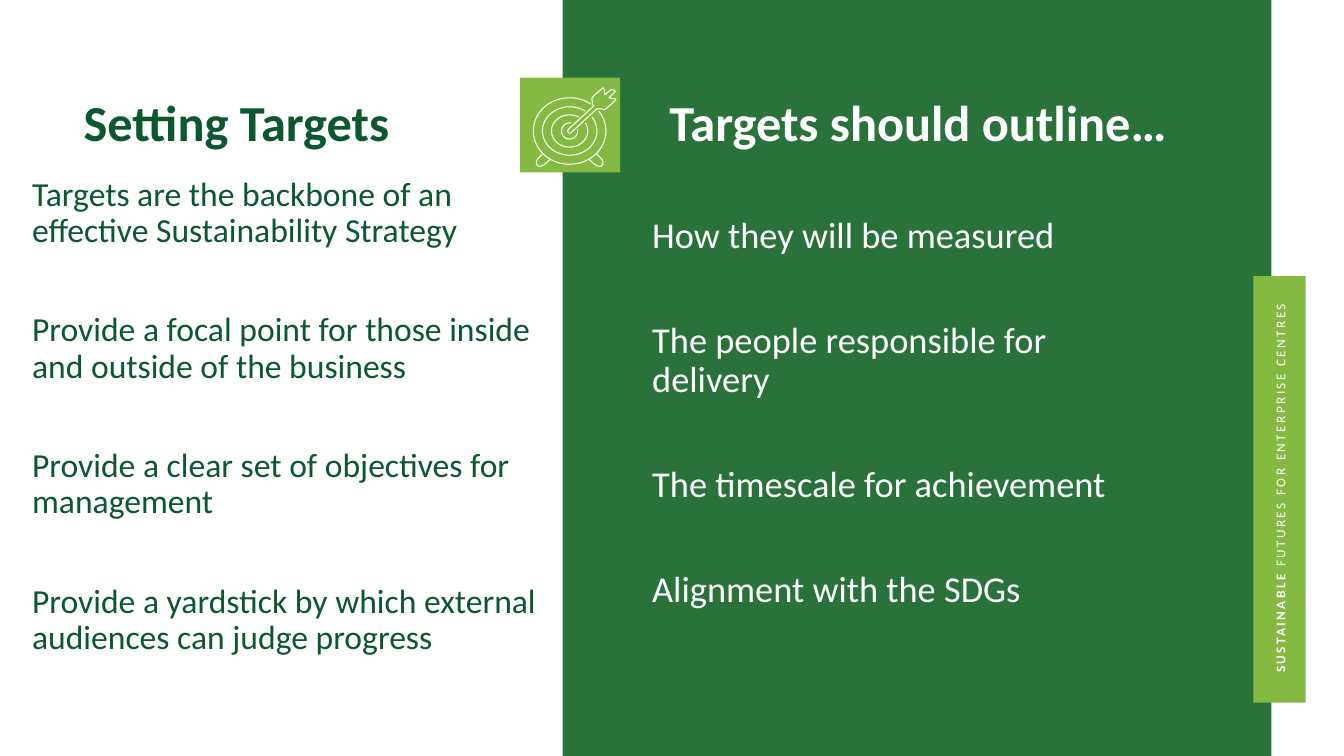
import math
from dataclasses import dataclass

import pptx
import pptx.dml.color
import pptx.enum.shapes
import pptx.enum.text
import pptx.util

Inches = pptx.util.Inches
Pt = pptx.util.Pt
ANCHOR = pptx.enum.text.MSO_ANCHOR
ALIGN = pptx.enum.text.PP_ALIGN


@dataclass(frozen=True)
class Theme:
    font: str = "Calibri"
    forest: str = "297239"
    lime: str = "84BA41"
    ink: str = "0B582E"
    white: str = "FFFFFF"
    heading: float = 36
    reasons: float = 24
    outline: float = 26
    strip: float = 9.5
    icon_line: float = 0.75


def rgb(value):
    return pptx.dml.color.RGBColor.from_string(value)


class SlideBuilder:
    def __init__(self, page, theme):
        self.page = page
        self.theme = theme

    def panel(self, left, top, width, height, color):
        shape = self.page.shapes.add_shape(
            pptx.enum.shapes.MSO_SHAPE.RECTANGLE,
            Inches(left), Inches(top), Inches(width), Inches(height))
        shape.shadow.inherit = False
        shape.fill.solid()
        shape.fill.fore_color.rgb = rgb(color)
        shape.line.fill.background()

    def span(self, para, text, size, color, bold=False, tracking=None):
        span = para.add_run()
        span.text = text
        span.font.name = self.theme.font
        span.font.size = Pt(size)
        span.font.bold = bold
        span.font.color.rgb = rgb(color)
        if tracking:
            span._r.get_or_add_rPr().set("spc", str(round(tracking * 100)))

    def box(self, left, top, width, height, anchor=ANCHOR.TOP):
        box = self.page.shapes.add_textbox(
            Inches(left), Inches(top), Inches(width), Inches(height))
        box.text_frame.word_wrap = True
        box.text_frame.vertical_anchor = anchor
        return box

    def paragraphs(self, frame, lines, size, color, gap=0, bold=False):
        for index, line in enumerate(lines):
            para = frame.add_paragraph() if index else frame.paragraphs[0]
            para.alignment = ALIGN.LEFT
            para.line_spacing = 0.9
            para.space_before = Pt(gap if index else 0)
            self.span(para, line, size, color, bold)

    def title(self, text, left, top, width, height):
        title = self.page.shapes.title
        title.left, title.top = Inches(left), Inches(top)
        title.width, title.height = Inches(width), Inches(height)
        title.text_frame.word_wrap = True
        title.text_frame.vertical_anchor = ANCHOR.TOP
        self.paragraphs(title.text_frame, [text], self.theme.heading,
                        self.theme.ink, bold=True)

    def outline(self, points, close=False):
        """Draw a thin unfilled line through points given in inches."""
        start, *rest = [(Inches(x), Inches(y)) for x, y in points]
        builder = self.page.shapes.build_freeform(*start, scale=1.0)
        builder.add_line_segments(rest, close=close)
        shape = builder.convert_to_shape()
        shape.shadow.inherit = False
        shape.fill.background()
        shape.line.color.rgb = rgb(self.theme.white)
        shape.line.width = Pt(self.theme.icon_line)

    def ring(self, center, radii, half_gap, steps=72):
        """Draw an ellipse left open around its upper right, where the arrow passes."""
        sweep = 360 - 2 * half_gap
        angles = [math.radians(half_gap - 45 + sweep * step / steps)
                  for step in range(steps + 1)]
        self.outline([(center[0] + radii[0] * math.cos(angle),
                       center[1] + radii[1] * math.sin(angle)) for angle in angles])


RINGS = [((0.36, 0.33), 9), ((0.27, 0.24), 10), ((0.18, 0.16), 15), ((0.08, 0.08), 34)]
TARGET_CENTER = (5.65, 1.3)
LEFT_FOOT = [(5.38, 1.53), (5.33, 1.58), (5.32, 1.6), (5.32, 1.63), (5.34, 1.65),
             (5.36, 1.65), (5.39, 1.64), (5.46, 1.58)]
ARROW = [(6.09, 0.98), (6.04, 0.97), (6.09, 0.92), (6.1, 0.91), (6.1, 0.9),
         (6.08, 0.89), (6.06, 0.89), (6, 0.94), (5.99, 0.88), (5.98, 0.87),
         (5.97, 0.88), (5.89, 0.95), (5.87, 0.98), (5.88, 1.04), (5.89, 1.05),
         (5.64, 1.28), (5.63, 1.3), (5.64, 1.32), (5.66, 1.32), (5.92, 1.08),
         (5.97, 1.08), (5.99, 1.09), (6.02, 1.07), (6.1, 1), (6.11, 0.98)]

REASONS = [
    "Targets are the backbone of an effective Sustainability Strategy",
    "Provide a focal point for those inside and outside of the business",
    "Provide a clear set of objectives for management",
    "Provide a yardstick by which external audiences can judge progress",
]
OUTLINE = [
    "How they will be measured",
    "The people responsible for delivery",
    "The timescale for achievement",
    "Alignment with the SDGs",
]


def main():
    deck = pptx.Presentation()
    deck.slide_width, deck.slide_height = Inches(13.33), Inches(7.5)
    theme = Theme()
    slide = SlideBuilder(deck.slides.add_slide(deck.slide_layouts[5]), theme)

    slide.panel(5.58, 0, 7.03, 7.5, theme.forest)
    slide.panel(5.16, 0.77, 0.99, 0.94, theme.lime)
    slide.panel(12.43, 2.74, 0.52, 4.23, theme.lime)

    strip = slide.box(10.74, 4.64, 3.91, 0.41, ANCHOR.MIDDLE)
    strip.rotation = 270
    strip_para = strip.text_frame.paragraphs[0]
    strip_para.alignment = ALIGN.CENTER
    for text, bold in (("SUSTAINABLE", True), (" FUTURES FOR ENTERPRISE CENTRES", False)):
        slide.span(strip_para, text, theme.strip, theme.white, bold, tracking=1.7)

    slide.title("Setting Targets", 0.73, 0.92, 4.35, 0.94)
    reasons = slide.box(0.22, 1.71, 5.35, 4.71)
    slide.paragraphs(reasons.text_frame, REASONS, theme.reasons, theme.ink, gap=45)

    heading = slide.box(6.54, 0.77, 5.38, 0.94, ANCHOR.MIDDLE)
    slide.paragraphs(heading.text_frame, ["Targets should outline…"],
                     theme.heading, theme.white, bold=True)
    outline = slide.box(6.37, 2.1, 5.35, 4.71)
    outline.text_frame.margin_right = Inches(0.3)
    slide.paragraphs(outline.text_frame, OUTLINE, theme.outline, theme.white, gap=47)

    for radii, half_gap in RINGS:
        slide.ring(TARGET_CENTER, radii, half_gap)
    slide.outline(LEFT_FOOT)
    slide.outline([(2 * TARGET_CENTER[0] - x, y) for x, y in LEFT_FOOT])
    slide.outline(ARROW, close=True)

    deck.save("out.pptx")


if __name__ == "__main__":
    main()
